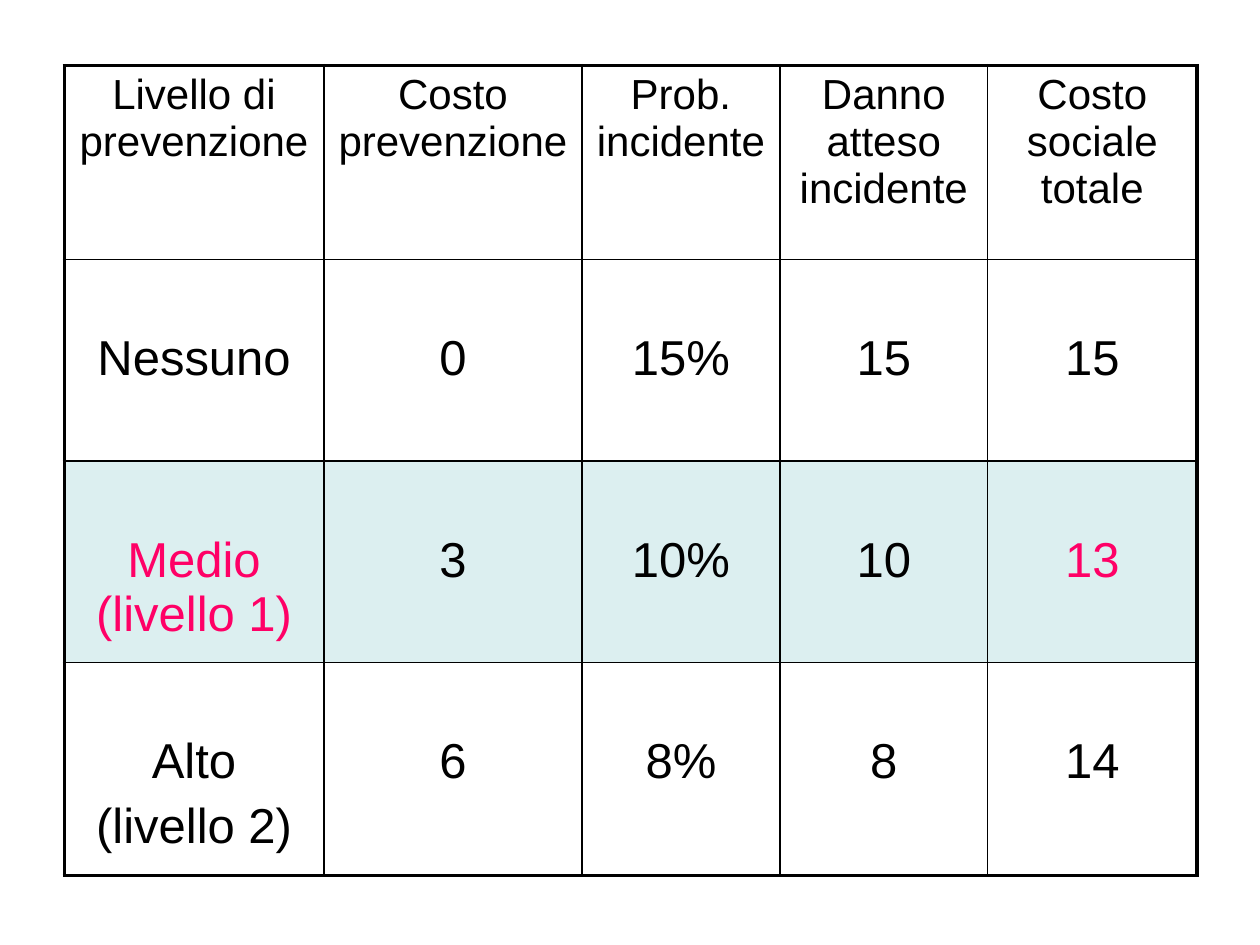
import pptx
import pptx.dml.color
import pptx.enum.text
import pptx.oxml
import pptx.oxml.ns
import pptx.util
from pptx.util import Inches

THEME = {
    "font": "Arial",
    "ink": "000000",
    "accent": "FF0066",
    "highlight": "BBE0E3",
    "highlight_alpha": 50,
    "header_size": 24,
    "body_size": 28,
    "paragraph_gap": 5.6,
    "outer_line": 2.25,
    "inner_line": 1,
}

COLUMN_WIDTHS = [2.06, 2.05, 1.57, 1.65, 1.66]
ROW_HEIGHTS = [1.54, 1.6, 1.6, 1.69]
ROWS = [
    ["Livello di prevenzione", "Costo prevenzione", "Prob. incidente",
     "Danno atteso incidente", "Costo sociale totale"],
    ["Nessuno", "0", "15%", "15", "15"],
    ["Medio (livello 1)", "3", "10%", "10", "13"],
    ["Alto\n(livello 2)", "6", "8%", "8", "14"],
]
HIGHLIGHT_ROW = 2
ACCENT_CELLS = {(2, 0), (2, 4)}
LAST_ROW, LAST_COLUMN = len(ROWS) - 1, len(COLUMN_WIDTHS) - 1


def add_border(cell, side, points):
    line = pptx.oxml.parse_xml(
        f'<a:ln{side} {pptx.oxml.ns.nsdecls("a")} w="{pptx.util.Pt(points)}">'
        f'<a:solidFill><a:srgbClr val="{THEME["ink"]}"/></a:solidFill>'
        f'</a:ln{side}>')
    cell._tc.get_or_add_tcPr().append(line)


def fill_cell(cell, highlighted):
    if not highlighted:
        cell.fill.background()
        return
    cell.fill.solid()
    cell.fill.fore_color.rgb = pptx.dml.color.RGBColor.from_string(THEME["highlight"])
    color = cell._tc.tcPr.find(pptx.oxml.ns.qn("a:solidFill"))[0]
    color.append(pptx.oxml.parse_xml(
        f'<a:alpha {pptx.oxml.ns.nsdecls("a")} val="{THEME["highlight_alpha"] * 1000}"/>'))


# Presentation and blank slide
presentation = pptx.Presentation()
presentation.slide_width, presentation.slide_height = Inches(10), Inches(7.5)
slide = presentation.slides.add_slide(presentation.slide_layouts[6])

# Prevention cost table
table = slide.shapes.add_table(
    len(ROWS), len(COLUMN_WIDTHS), Inches(0.51), Inches(0.52),
    Inches(sum(COLUMN_WIDTHS)), Inches(sum(ROW_HEIGHTS))).table
for name, value in {"first_row": False, "horz_banding": False}.items():
    setattr(table, name, value)
for column, width in zip(table.columns, COLUMN_WIDTHS):
    column.width = Inches(width)
for row, height in zip(table.rows, ROW_HEIGHTS):
    row.height = Inches(height)

# Cells
for row_index, row_texts in enumerate(ROWS):
    is_header = row_index == 0
    for column_index, text in enumerate(row_texts):
        cell = table.cell(row_index, column_index)
        cell_format = {
            "margin_left": Inches(0.1),
            "margin_right": Inches(0.1),
            "margin_top": Inches(0.05 if is_header else 0.57),
            "margin_bottom": Inches(0.05),
            "vertical_anchor": pptx.enum.text.MSO_ANCHOR.TOP,
        }
        for name, value in cell_format.items():
            setattr(cell, name, value)

        # Borders: heavier around the outside
        outer_sides = {
            "L": column_index == 0,
            "R": column_index == LAST_COLUMN,
            "T": row_index == 0,
            "B": row_index == LAST_ROW,
        }
        for side, is_outer in outer_sides.items():
            add_border(cell, side, THEME["outer_line" if is_outer else "inner_line"])
        fill_cell(cell, row_index == HIGHLIGHT_ROW)

        # Text
        color = THEME["accent" if (row_index, column_index) in ACCENT_CELLS else "ink"]
        font_format = {
            "name": THEME["font"],
            "size": pptx.util.Pt(THEME["header_size" if is_header else "body_size"]),
            "bold": False,
        }
        cell.text_frame.text = text
        for paragraph_index, paragraph in enumerate(cell.text_frame.paragraphs):
            paragraph.alignment = pptx.enum.text.PP_ALIGN.CENTER
            if paragraph_index > 0:
                paragraph.space_before = pptx.util.Pt(THEME["paragraph_gap"])
            font = paragraph.runs[0].font
            for name, value in font_format.items():
                setattr(font, name, value)
            font.color.rgb = pptx.dml.color.RGBColor.from_string(color)

presentation.save("out.pptx")
